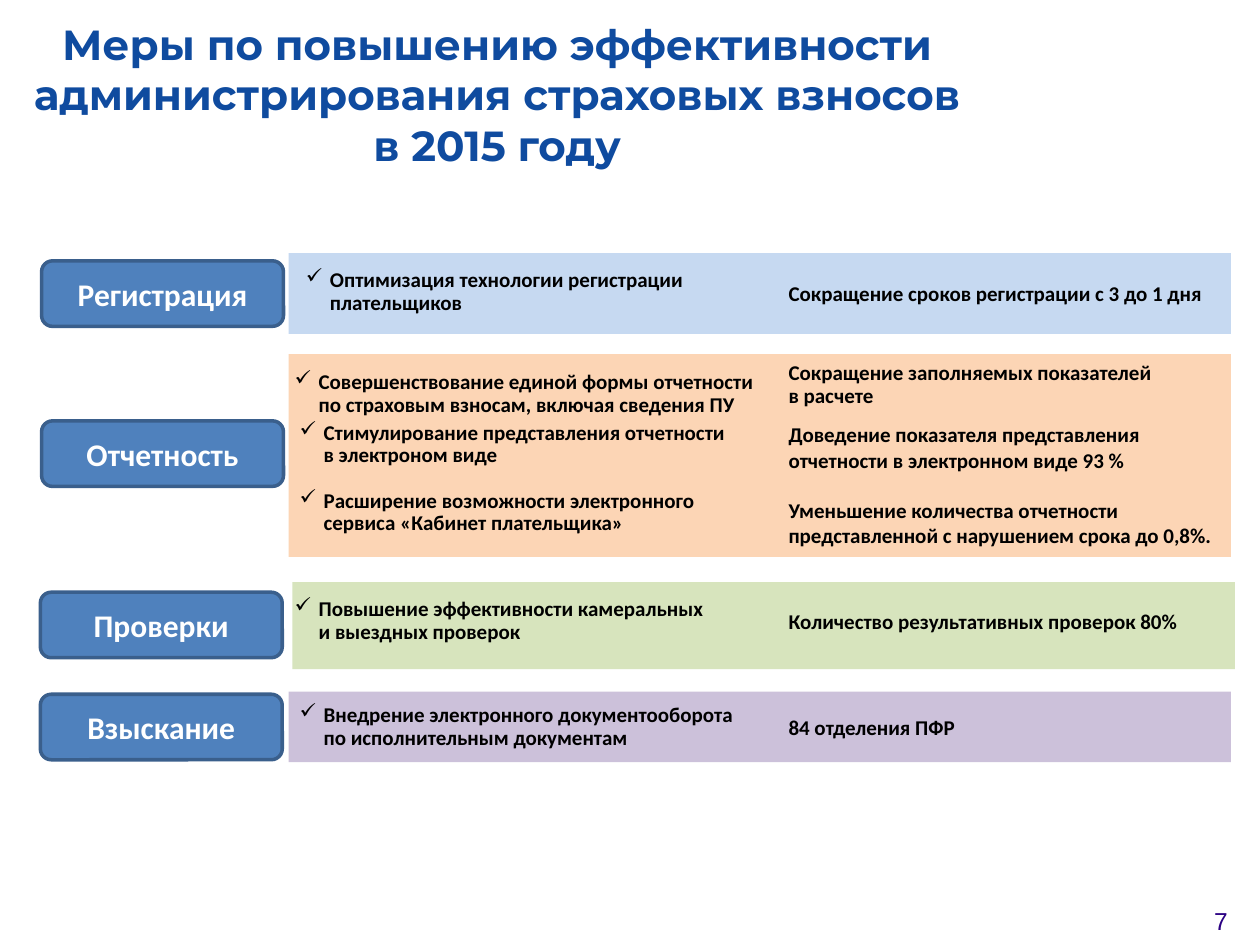
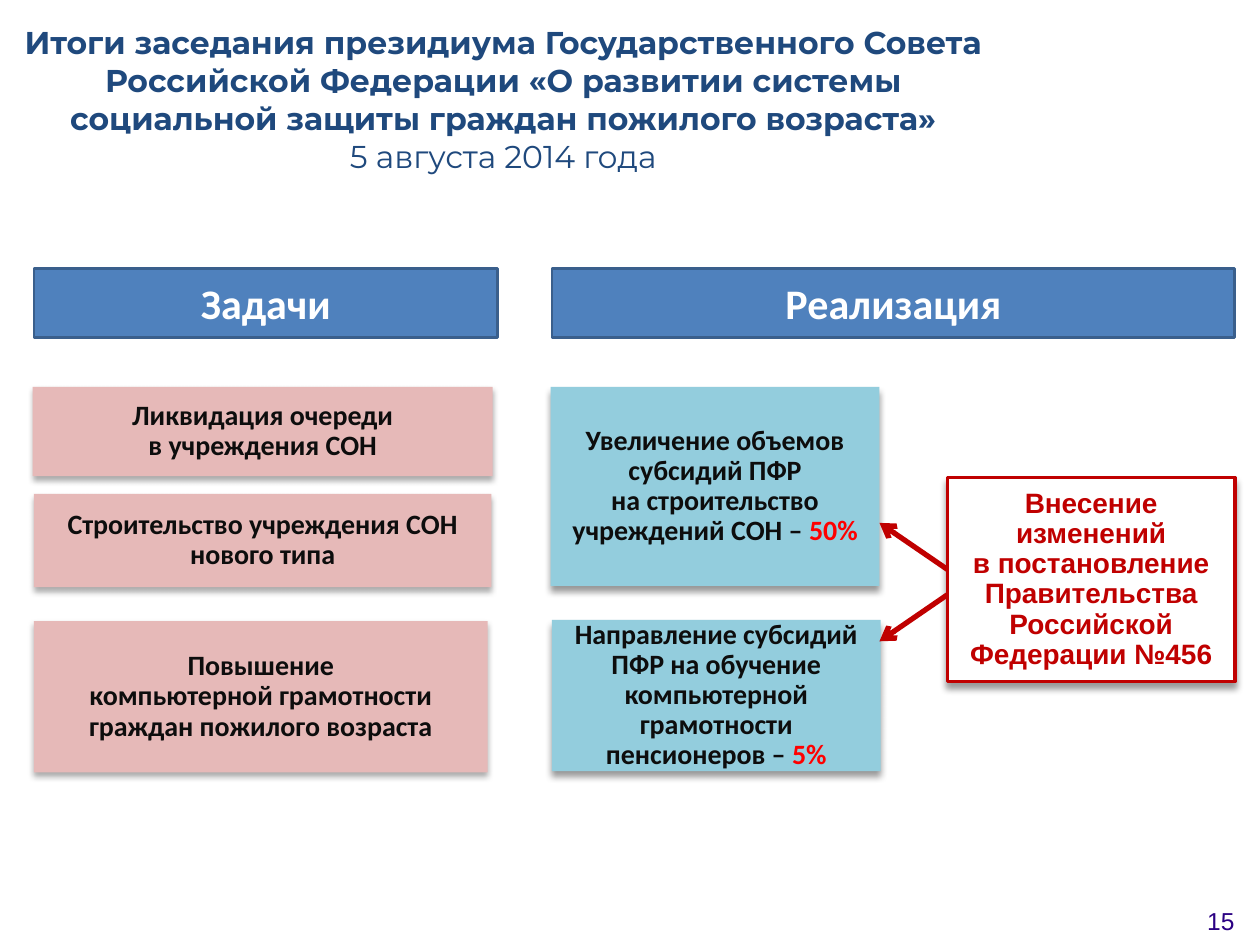
"""Build two slides on insurance contribution measures and social protection results."""
from dataclasses import dataclass, replace
from typing import NamedTuple

from lxml import etree
from pptx import Presentation
from pptx.dml.color import RGBColor
from pptx.enum.shapes import MSO_CONNECTOR, MSO_SHAPE
from pptx.enum.text import MSO_ANCHOR, PP_ALIGN
from pptx.oxml.ns import qn
from pptx.util import Emu, Inches, Pt

RECTANGLE = MSO_SHAPE.RECTANGLE
ROUNDED = MSO_SHAPE.ROUNDED_RECTANGLE
STRAIGHT = MSO_CONNECTOR.STRAIGHT
LEFT, CENTER = PP_ALIGN.LEFT, PP_ALIGN.CENTER
TOP, MIDDLE = MSO_ANCHOR.TOP, MSO_ANCHOR.MIDDLE

WHITE, BLUE, BLUE_EDGE = "FFFFFF", "4F81BD", "3A5F8C"
PINK, AQUA, DARK_RED, RED = "E6B9B8", "93CDDD", "C00000", "FF0000"


class Box(NamedTuple):
    """Left, top, width and height in inches."""
    left: float
    top: float
    width: float
    height: float

    def lengths(self) -> list[Emu]:
        """Return the box as slide lengths."""
        return [Inches(value) for value in self]


@dataclass(frozen=True)
class TextStyle:
    """Look of one block of text."""
    size: float
    color: str
    font: str = "Calibri"
    bold: bool = True
    align: PP_ALIGN = LEFT
    anchor: MSO_ANCHOR = TOP
    line_spacing: float = 1.0
    paragraph_gap: float = 0
    bullet: str = ""
    inset: float | None = None


@dataclass(frozen=True)
class Accent:
    """Closing run that differs in colour or weight."""
    text: str
    color: str
    bold: bool = True


@dataclass(frozen=True)
class Shadow:
    """Soft shadow falling straight down."""
    opacity: int
    blur: float
    distance: float


@dataclass(frozen=True)
class Look:
    """Fill, outline and shadow of a shape."""
    fill: str
    line: str = ""
    line_width: float = 0
    shadow: Shadow | None = None


@dataclass(frozen=True)
class Stage:
    """Administration stage: its label and its coloured band."""
    name: str
    label: Box
    band: Box
    color: str


@dataclass(frozen=True)
class Card:
    """Filled card with centred text."""
    box: Box
    text: str
    look: Look
    style: TextStyle
    accent: Accent | None = None


TITLE = TextStyle(24, "0F4B9F", "Montserrat", align=CENTER, anchor=MIDDLE)
RESULTS_TITLE = replace(TITLE, size=18, color="1F497D")
NUMBER = TextStyle(14, "2B0083", "Arial", bold=False, align=CENTER)
RESULT = TextStyle(12, "000000", paragraph_gap=14.5)
TIGHT_RESULT = replace(RESULT, line_spacing=0.9)
MEASURE = replace(TIGHT_RESULT, bullet="✓", paragraph_gap=13)
LABEL = TextStyle(18, WHITE, align=CENTER, anchor=MIDDLE)
HEADER = replace(LABEL, size=24)
CARD = TextStyle(16, "0D0D0D", align=CENTER, anchor=MIDDLE, line_spacing=0.9, inset=0.07)
DECREE = replace(CARD, font="Arial", color=DARK_RED)

LABEL_LOOK = Look(BLUE, BLUE_EDGE, 2)
HEADER_LOOK = Look(BLUE, BLUE_EDGE, 1.5)
DEEP_SHADOW = Shadow(40, 4, 3)
TASK_LOOK = Look(PINK, shadow=Shadow(32, 3.5, 2.2))
SUBSIDY_LOOK = Look(AQUA, shadow=DEEP_SHADOW)
DECREE_LOOK = Look(WHITE, DARK_RED, 2, DEEP_SHADOW)

NUMBER_BOX = Box(9.41, 7.14, 0.56, 0.36)
RESULT_LEFT, RESULT_WIDTH = 6.16, 3.65

STAGES = [
    Stage("Регистрация", Box(0.33, 2.07, 1.92, 0.52), Box(2.29, 2.01, 7.48, 0.64), "C6D9F1"),
    Stage("Отчетность", Box(0.33, 3.34, 1.92, 0.52), Box(2.29, 2.81, 7.48, 1.61), "FCD5B5"),
    Stage("Проверки", Box(0.32, 4.7, 1.92, 0.52), Box(2.32, 4.62, 7.48, 0.69), "D7E4BD"),
    Stage("Взыскание", Box(0.32, 5.51, 1.92, 0.52), Box(2.29, 5.49, 7.48, 0.56), "CCC1DA"),
]
MEASURES = [
    (Box(2.33, 2.09, 3.54, 0.46), "Оптимизация технологии регистрации плательщиков"),
    (Box(2.24, 2.9, 3.92, 0.46),
     "Совершенствование единой формы отчетности по страховым взносам, включая сведения ПУ"),
    (Box(2.28, 3.3, 3.75, 1.19),
     "Стимулирование представления отчетности\vв электроном виде\n"
     "Расширение возможности электронного сервиса «Кабинет плательщика»"),
    (Box(2.24, 4.7, 4.38, 0.46), "Повышение эффективности камеральных\vи выездных проверок"),
    (Box(2.28, 5.54, 3.83, 0.46),
     "Внедрение электронного документооборота по исполнительным документам"),
]
RESULTS = [
    (2.18, 0.3, "Сокращение сроков регистрации с 3 до 1 дня", RESULT),
    (2.83, 0.46, "Сокращение заполняемых показателей\vв расчете", TIGHT_RESULT),
    (3.3, 1.1,
     "Доведение показателя представления отчетности в электронном виде 93 %\n"
     "Уменьшение количества отчетности представленной с нарушением срока до 0,8%.", RESULT),
    (4.78, 0.3, "Количество результативных проверок 80%", RESULT),
    (5.62, 0.3, "84 отделения ПФР", RESULT),
]
CARDS = [
    Card(Box(0.27, 2.13, 3.68, 0.55), "Задачи", HEADER_LOOK, HEADER),
    Card(Box(4.38, 2.13, 5.42, 0.55), "Реализация", HEADER_LOOK, HEADER),
    Card(Box(0.26, 3.07, 3.65, 0.71), "Ликвидация очереди\vв учреждения СОН", TASK_LOOK, CARD),
    Card(Box(0.27, 3.92, 3.63, 0.74), "Строительство учреждения СОН нового типа",
         TASK_LOOK, CARD),
    Card(Box(0.27, 4.93, 3.6, 1.2),
         "Повышение\vкомпьютерной грамотности\vграждан пожилого возраста", TASK_LOOK, CARD),
    Card(Box(4.37, 3.07, 2.61, 1.58),
         "Увеличение объемов субсидий ПФР\vна строительство учреждений СОН – ",
         SUBSIDY_LOOK, CARD, Accent("50%", RED)),
    Card(Box(4.38, 4.92, 2.61, 1.2),
         "Направление субсидий ПФР на обучение компьютерной грамотности пенсионеров – ",
         SUBSIDY_LOOK, CARD, Accent("5%", RED)),
    Card(Box(7.52, 3.79, 2.28, 1.62),
         "Внесение изменений\vв постановление Правительства Российской Федерации №456",
         DECREE_LOOK, DECREE),
]
ARROWS = [((7.52, 4.52), (6.98, 4.15)), ((7.52, 4.72), (6.98, 5.09))]


def rgb(color: str) -> RGBColor:
    """Turn a hex string into a colour."""
    return RGBColor.from_string(color)


def format_run(run, style: TextStyle) -> None:
    """Apply font, size, weight and colour to a run."""
    run.font.name = style.font
    run.font.size = Pt(style.size)
    run.font.bold = style.bold
    run.font.color.rgb = rgb(style.color)


def add_bullet(paragraph, character: str) -> None:
    """Give a paragraph a hanging bullet."""
    properties = paragraph._p.get_or_add_pPr()
    properties.set("marL", str(Inches(0.19)))
    properties.set("indent", str(-Inches(0.19)))
    etree.SubElement(properties, qn("a:buChar"), char=character)


def write_text(shape, text: str, style: TextStyle, accent: Accent | None = None) -> None:
    """Fill a shape with styled text and an optional closing accent."""
    frame = shape.text_frame
    frame.text = text
    frame.word_wrap = True
    frame.vertical_anchor = style.anchor
    if style.inset is not None:
        frame.margin_left = frame.margin_right = Inches(style.inset)
        frame.margin_top = frame.margin_bottom = Inches(style.inset)
    for index, paragraph in enumerate(frame.paragraphs):
        if style.bullet:
            add_bullet(paragraph, style.bullet)
        paragraph.alignment = style.align
        paragraph.line_spacing = style.line_spacing
        if index:
            paragraph.space_before = Pt(style.paragraph_gap)
        for run in paragraph.runs:
            format_run(run, style)
        for line_break in paragraph._p.findall(qn("a:br")):
            etree.SubElement(line_break, qn("a:rPr"), sz=str(int(style.size * 100)))
    if accent:
        run = frame.paragraphs[-1].add_run()
        run.text = accent.text
        format_run(run, replace(style, color=accent.color, bold=accent.bold))


def add_text(slide, box: Box, text: str, style: TextStyle, accent: Accent | None = None) -> None:
    """Place a text box."""
    write_text(slide.shapes.add_textbox(*box.lengths()), text, style, accent)


def add_shadow(shape, shadow: Shadow) -> None:
    """Add a downward outer shadow to a shape."""
    effects = shape._element.spPr.find(qn("a:effectLst"))
    outer = etree.SubElement(
        effects, qn("a:outerShdw"), blurRad=str(Pt(shadow.blur)),
        dist=str(Pt(shadow.distance)), dir="5400000", rotWithShape="0")
    color = etree.SubElement(outer, qn("a:srgbClr"), val="000000")
    etree.SubElement(color, qn("a:alpha"), val=str(shadow.opacity * 1000))


def add_block(slide, kind: MSO_SHAPE, box: Box, look: Look):
    """Place a filled preset shape."""
    shape = slide.shapes.add_shape(kind, *box.lengths())
    shape.fill.solid()
    shape.fill.fore_color.rgb = rgb(look.fill)
    if look.line:
        shape.line.color.rgb = rgb(look.line)
        shape.line.width = Pt(look.line_width)
    else:
        shape.line.fill.background()
    shape.shadow.inherit = False
    if look.shadow:
        add_shadow(shape, look.shadow)
    return shape


def add_arrow(slide, start: tuple[float, float], end: tuple[float, float]) -> None:
    """Draw a red arrow between two points."""
    points = [Inches(value) for value in (*start, *end)]
    connector = slide.shapes.add_connector(STRAIGHT, *points)
    connector.line.color.rgb = rgb(DARK_RED)
    connector.line.width = Pt(3)
    etree.SubElement(connector.line._get_or_add_ln(), qn("a:tailEnd"), type="arrow")
    etree.SubElement(connector._element.spPr, qn("a:effectLst"))


def add_slide(presentation, number: int, title_box: Box, title: str,
              style: TextStyle, accent: Accent | None = None):
    """Add a blank slide with its title and number."""
    slide = presentation.slides.add_slide(presentation.slide_layouts[6])
    add_text(slide, title_box, title, style, accent)
    add_text(slide, NUMBER_BOX, str(number), NUMBER)
    return slide


def build_measures(presentation) -> None:
    """Build the slide of administration measures."""
    slide = add_slide(
        presentation, 7, Box(0.13, 0.09, 7.63, 1.31),
        "Меры по повышению эффективности администрирования страховых взносов в 2015 году", TITLE)
    for stage in STAGES:
        add_block(slide, RECTANGLE, stage.band, Look(stage.color))
        label = add_block(slide, ROUNDED, stage.label, LABEL_LOOK)
        write_text(label, stage.name, LABEL)
    for box, text in MEASURES:
        add_text(slide, box, text, MEASURE)
    for top, height, text, style in RESULTS:
        add_text(slide, Box(RESULT_LEFT, top, RESULT_WIDTH, height), text, style)


def build_council_results(presentation) -> None:
    """Build the slide of council tasks and their implementation."""
    slide = add_slide(
        presentation, 15, Box(0.08, 0.13, 7.83, 1.31),
        "Итоги заседания президиума Государственного Совета Российской Федерации "
        "«О развитии системы социальной защиты граждан пожилого возраста»\v",
        RESULTS_TITLE, Accent("5 августа 2014 года", RESULTS_TITLE.color, bold=False))
    for card in CARDS:
        shape = add_block(slide, RECTANGLE, card.box, card.look)
        write_text(shape, card.text, card.style, card.accent)
    for start, end in ARROWS:
        add_arrow(slide, start, end)


def main() -> None:
    """Build and save the presentation."""
    presentation = Presentation()
    presentation.slide_width = Inches(10)
    presentation.slide_height = Inches(7.5)
    build_measures(presentation)
    build_council_results(presentation)
    presentation.save("out.pptx")


if __name__ == "__main__":
    main()
